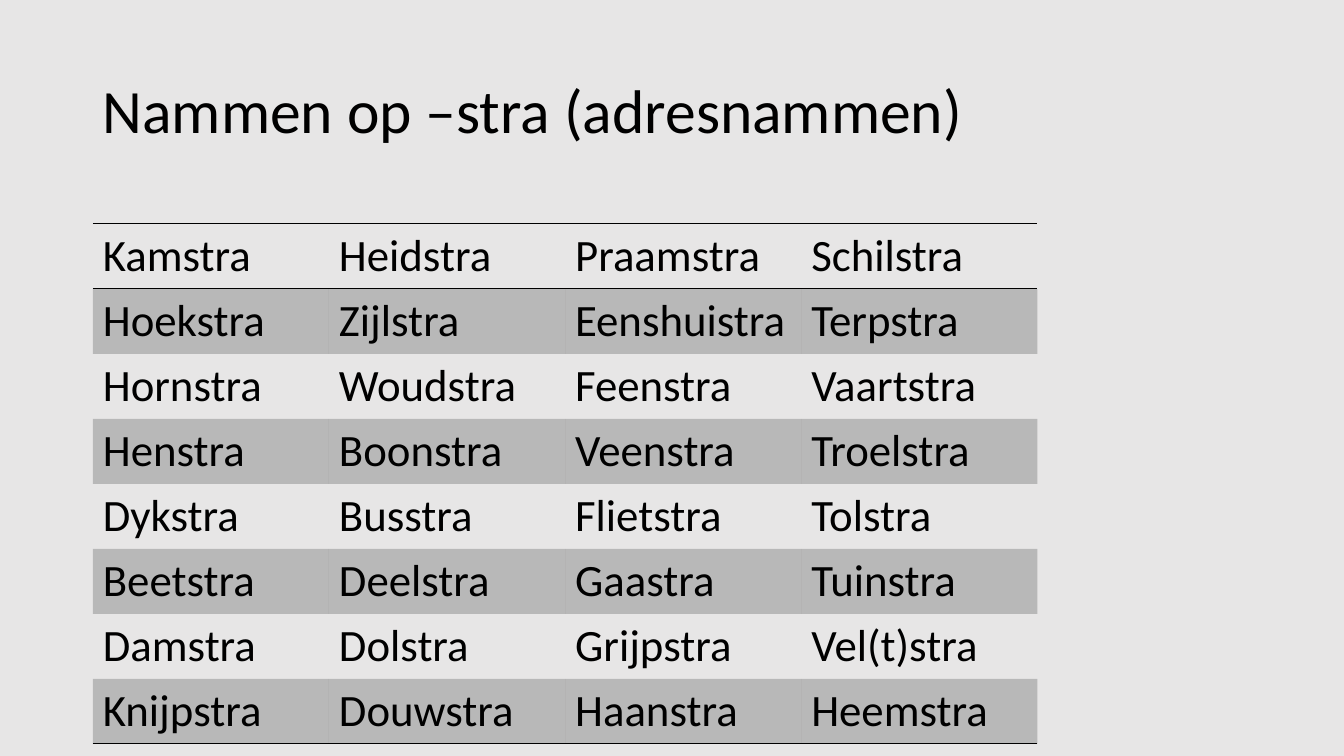
from lxml.etree import SubElement as Sub
from pptx import Presentation
from pptx.dml.color import RGBColor as Rgb
from pptx.enum.text import MSO_ANCHOR as Anchor
from pptx.oxml.ns import qn
from pptx.util import Inches, Pt

FONT = "Calibri"
HUES = {"back": "E7E6E6", "ink": "000000"}
BAND = 20
LEFT = 0.92
NAMES = [
    ["Kamstra", "Heidstra", "Praamstra", "Schilstra"],
    ["Hoekstra", "Zijlstra", "Eenshuistra", "Terpstra"],
    ["Hornstra", "Woudstra", "Feenstra", "Vaartstra"],
    ["Henstra", "Boonstra", "Veenstra", "Troelstra"],
    ["Dykstra", "Busstra", "Flietstra", "Tolstra"],
    ["Beetstra", "Deelstra", "Gaastra", "Tuinstra"],
    ["Damstra", "Dolstra", "Grijpstra", "Vel(t)stra"],
    ["Knijpstra", "Douwstra", "Haanstra", "Heemstra"],
]
RULES = {0, 1, len(NAMES)}


def add_run(para, text, size):
    """Add one run of text to a paragraph."""
    run = para.add_run()
    run.text = text
    run.font.size = Pt(size)
    run.font.name = FONT
    run.font.color.rgb = Rgb.from_string(HUES["ink"])


def add_title(slide, text):
    """Add the title, centred in its height."""
    box = slide.shapes.add_textbox(
        Inches(LEFT), Inches(0.4), Inches(11.5), Inches(1.45))
    frame = box.text_frame
    frame.word_wrap = True
    frame.vertical_anchor = Anchor.MIDDLE
    para = frame.paragraphs[0]
    para.line_spacing = 0.9
    add_run(para, text, 44)


def add_fill(node):
    """Add a solid ink fill and return its colour."""
    fill = Sub(node, qn("a:solidFill"))
    return Sub(fill, qn("a:srgbClr"), val=HUES["ink"])


def add_edge(props, side, ruled):
    """Draw or hide one side of a cell."""
    line = Sub(props, qn(f"a:ln{side}"), w=str(Pt(1)))
    if ruled:
        add_fill(line)
    else:
        Sub(line, qn("a:noFill"))


def style_cell(cell, row):
    """Set the edges and fill that a row calls for."""
    props = cell._tc.get_or_add_tcPr()
    edges = {"L": False, "R": False, "T": row in RULES, "B": row + 1 in RULES}
    for side, ruled in edges.items():
        add_edge(props, side, ruled)
    if row % 2:
        Sub(add_fill(props), qn("a:alpha"), val=str(BAND * 1000))
    else:
        cell.fill.background()


def add_names(slide):
    """Add the table of names."""
    rows, cols = len(NAMES), len(NAMES[0])
    table = slide.shapes.add_table(
        rows, cols, Inches(LEFT), Inches(2.22),
        Inches(9.37), Inches(5.16)).table
    table.first_row = table.horz_banding = False
    for row, names in enumerate(NAMES):
        for col, name in enumerate(names):
            cell = table.cell(row, col)
            style_cell(cell, row)
            add_run(cell.text_frame.paragraphs[0], name, 32)


def main():
    """Build and save the slide."""
    deck = Presentation()
    deck.slide_width, deck.slide_height = Inches(13.33), Inches(7.5)
    slide = deck.slides.add_slide(deck.slide_layouts[6])
    fill = slide.background.fill
    fill.solid()
    fill.fore_color.rgb = Rgb.from_string(HUES["back"])
    add_title(slide, "Nammen op –stra (adresnammen)")
    add_names(slide)
    deck.save("out.pptx")


if __name__ == "__main__":
    main()
